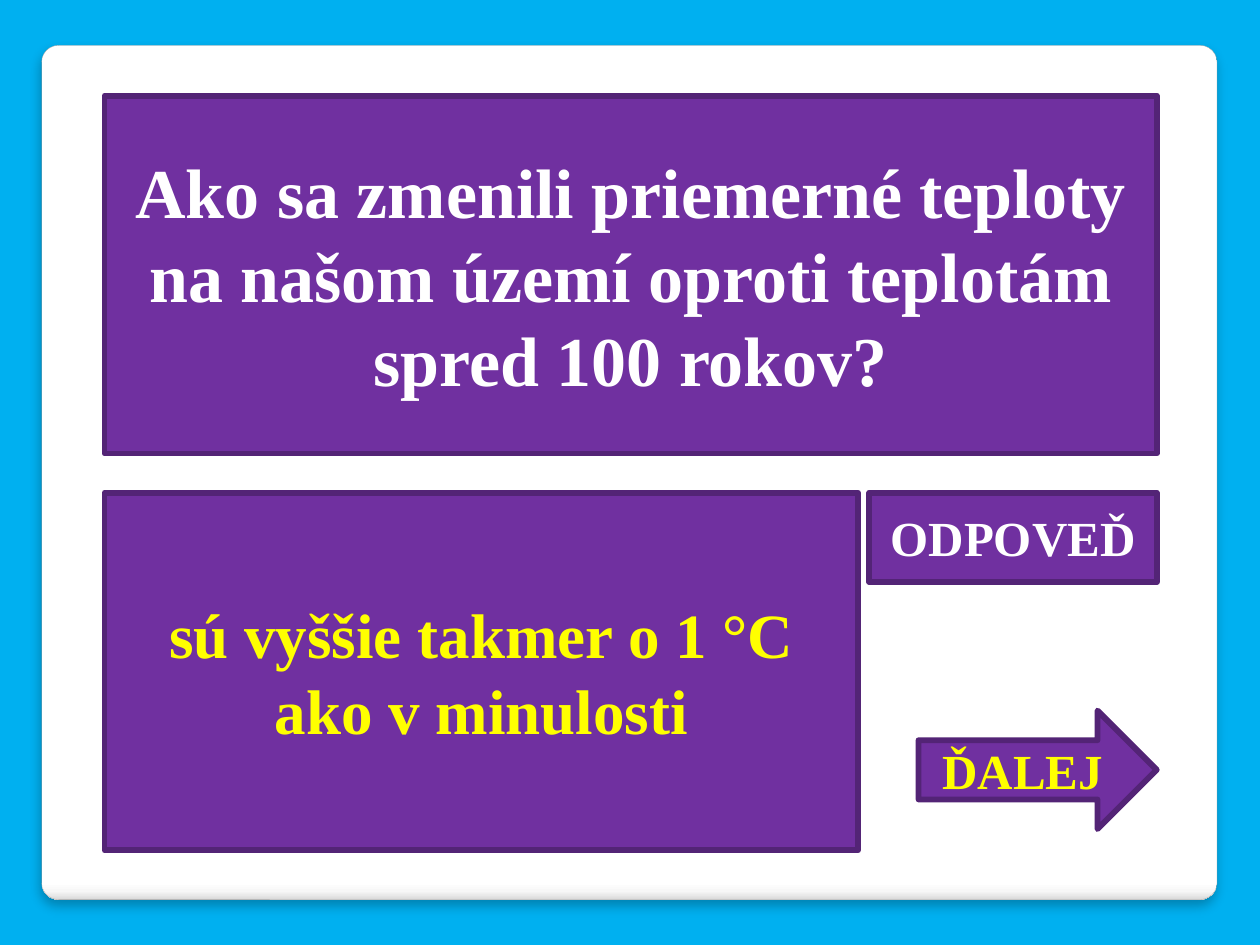
from lxml import etree
from pptx import Presentation
from pptx.dml.color import RGBColor
from pptx.enum.shapes import MSO_SHAPE
from pptx.enum.text import MSO_ANCHOR, PP_ALIGN
from pptx.oxml.ns import qn
from pptx.util import Inches, Pt

RECTANGLE = MSO_SHAPE.RECTANGLE
ROUNDED = MSO_SHAPE.ROUNDED_RECTANGLE
ARROW = MSO_SHAPE.RIGHT_ARROW
MIDDLE = MSO_ANCHOR.MIDDLE
CENTER = PP_ALIGN.CENTER

SKY, PURPLE, DARK_PURPLE = "00B0F0", "7030A0", "532476"
WHITE, YELLOW, GRAY = "FFFFFF", "FFFF00", "A4A4A4"
PANEL_STOPS = [(0, WHITE), (98, WHITE), (99, "F7F7F7"), (100, "DADADA")]


def color(value):
    """Return the colour for a hex string."""
    return RGBColor.from_string(value)


def add_box(slide, kind, box, line_color, line_width):
    """Add an outlined shape without a theme shadow."""
    shape = slide.shapes.add_shape(kind, *[Inches(length) for length in box])
    shape.shadow.inherit = False
    shape.line.color.rgb = color(line_color)
    shape.line.width = Pt(line_width)
    return shape


def add_color_node(parent, value):
    """Append an RGB colour element to an XML parent."""
    return etree.SubElement(parent, qn("a:srgbClr"), val=value)


def add_panel(slide, box):
    """Add the white rounded panel with its gradient and soft shadow."""
    shape = add_box(slide, ROUNDED, box, GRAY, 0.16)
    shape.adjustments[0] = 0.02
    shape.fill.gradient()
    shape.fill.gradient_angle = 270
    properties = shape._element.spPr
    stops = properties.find(".//" + qn("a:gsLst"))
    for stop in list(stops):
        stops.remove(stop)
    for position, value in PANEL_STOPS:
        stop = etree.SubElement(stops, qn("a:gs"), pos=str(position * 1000))
        add_color_node(stop, value)
    shadow = etree.SubElement(
        properties.find(qn("a:effectLst")), qn("a:outerShdw"),
        blurRad=str(Pt(6)), dist=str(Pt(4)), dir="5400000",
        algn="t", rotWithShape="0")
    etree.SubElement(add_color_node(shadow, "000000"), qn("a:alpha"), val="25000")


def add_card(slide, box, text, size, text_color, kind=RECTANGLE):
    """Add a purple shape with bold centred text."""
    shape = add_box(slide, kind, box, DARK_PURPLE, 3.35)
    shape.fill.solid()
    shape.fill.fore_color.rgb = color(PURPLE)
    frame = shape.text_frame
    frame.word_wrap = True
    frame.vertical_anchor = MIDDLE
    paragraph = frame.paragraphs[0]
    paragraph.alignment = CENTER
    run = paragraph.add_run()
    run.text = text
    font_format = {"name": "Times New Roman", "size": Pt(size), "bold": True}
    for name, value in font_format.items():
        setattr(run.font, name, value)
    run.font.color.rgb = color(text_color)


def add_quiz(slide, box):
    """Place the question, answer, label and arrow inside the box."""
    left, top, width, height = box
    right, card_height, answer_top = left + width, 2.84, top + height - 2.84
    label_width, arrow_width = 2.28, 1.89
    add_card(slide, (left, top, width, card_height),
             "Ako sa zmenili priemerné teploty na našom území oproti teplotám "
             "spred 100 rokov?", 40, WHITE)
    add_card(slide, (left, answer_top, 5.98, card_height),
             "sú vyššie takmer o 1 °C ako v minulosti", 36, YELLOW)
    add_card(slide, (right - label_width, answer_top, label_width, 0.71),
             "ODPOVEĎ", 28, WHITE)
    add_card(slide, (right - arrow_width, answer_top + 1.73, arrow_width, 0.94),
             "ĎALEJ", 28, YELLOW, ARROW)


def main():
    """Build and save the quiz slide."""
    presentation = Presentation()
    presentation.slide_width = Inches(10)
    presentation.slide_height = Inches(7.5)
    slide = presentation.slides.add_slide(presentation.slide_layouts[6])
    slide.background.fill.solid()
    slide.background.fill.fore_color.rgb = color(SKY)
    add_panel(slide, (0.33, 0.36, 9.33, 6.78))
    add_quiz(slide, (0.83, 0.76, 8.35, 5.99))
    presentation.save("out.pptx")


if __name__ == "__main__":
    main()
